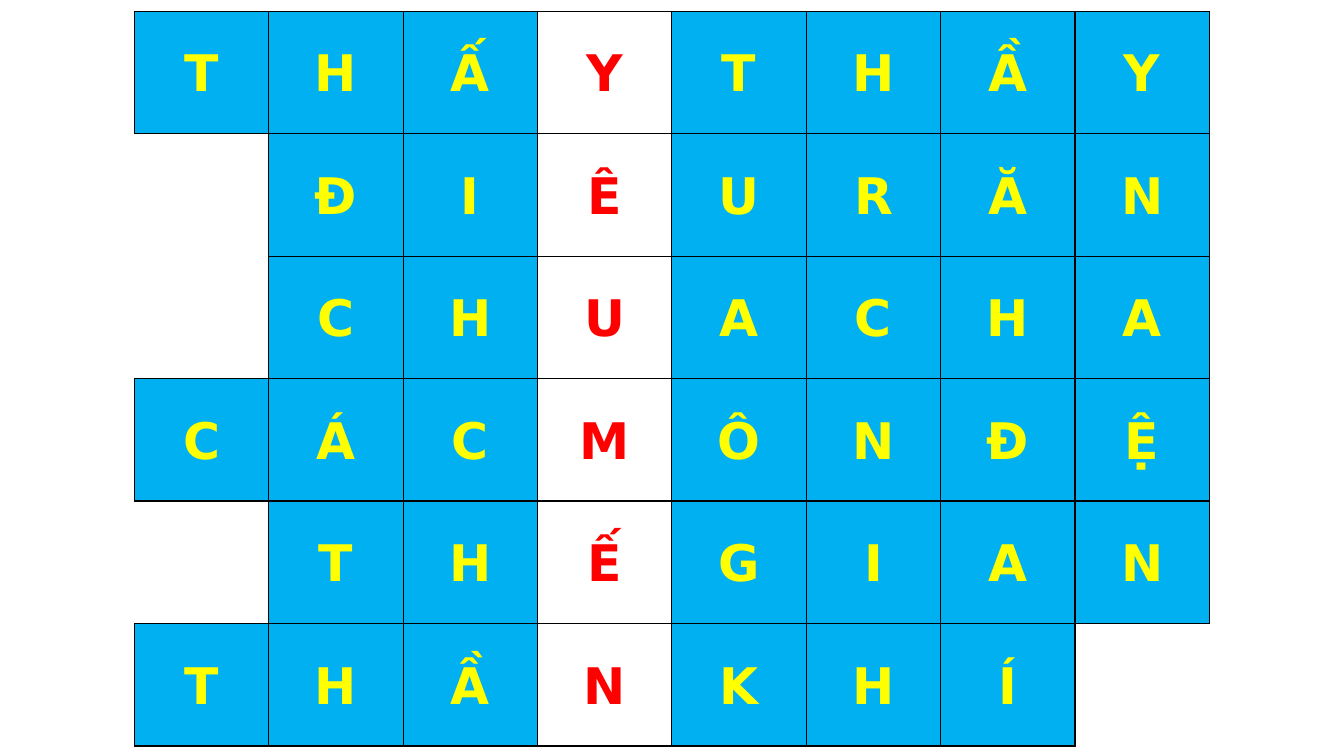
from dataclasses import dataclass

from lxml.etree import SubElement
from pptx import Presentation
from pptx.dml.color import RGBColor
from pptx.enum.text import MSO_ANCHOR, PP_ALIGN
from pptx.oxml.ns import qn
from pptx.util import Emu, Pt


@dataclass(frozen=True)
class Theme:
    """Colours and type of the crossword."""
    tile: str = "00B0F0"
    key_tile: str = "FFFFFF"
    letter: str = "FFFF00"
    key_letter: str = "FF0000"
    border: str = "000000"
    font: str = "DejaVu Sans"
    letter_size: int = 36
    line_spacing: float = 1.07
    border_width: int = 1


THEME = Theme()
EMU_PER_PX = 6350
SLIDE_WIDTH, SLIDE_HEIGHT = 1920, 1080
COLUMN_WIDTH, ROW_HEIGHT, GRID_TOP = 192, 175, 16
CELL_INSET = 10
COLUMN_COUNT = 10
KEY_COLUMN = 4
ANSWERS = [
    (1, "THẤYTHẦY"),
    (2, "ĐIÊURĂN"),
    (2, "CHUACHA"),
    (1, "CÁCMÔNĐỆ"),
    (2, "THẾGIAN"),
    (1, "THẦNKHÍ"),
]
EDGES = {"a:lnL": (0, -1), "a:lnR": (0, 1), "a:lnT": (-1, 0), "a:lnB": (1, 0)}


def px(length):
    """Turn pixels into EMU."""
    return Emu(length * EMU_PER_PX)


def place_letters():
    """Map each (row, column) to its letter."""
    return {
        (row, start + offset): letter
        for row, (start, answer) in enumerate(ANSWERS)
        for offset, letter in enumerate(answer)
    }


def add_edge(cell, tag, visible):
    """Draw or clear one border of a cell."""
    properties = cell._tc.get_or_add_tcPr()
    line = SubElement(properties, qn(tag), w=str(Pt(THEME.border_width)))
    if visible:
        fill = SubElement(line, qn("a:solidFill"))
        SubElement(fill, qn("a:srgbClr"), val=THEME.border)
    else:
        SubElement(line, qn("a:noFill"))


def fill_tile(cell, letter, is_key):
    """Colour a tile and centre its letter."""
    cell.fill.solid()
    tile = THEME.key_tile if is_key else THEME.tile
    cell.fill.fore_color.rgb = RGBColor.from_string(tile)
    cell.vertical_anchor = MSO_ANCHOR.MIDDLE
    cell.margin_left = cell.margin_right = px(CELL_INSET)
    cell.margin_top = cell.margin_bottom = 0
    para = cell.text_frame.paragraphs[0]
    para.text = letter
    para.alignment = PP_ALIGN.CENTER
    para.line_spacing = THEME.line_spacing
    para.font.name = THEME.font
    para.font.size = Pt(THEME.letter_size)
    para.font.bold = True
    colour = THEME.key_letter if is_key else THEME.letter
    para.font.color.rgb = RGBColor.from_string(colour)


def add_crossword(page):
    """Add the crossword table, bordering every lettered tile."""
    row_count = len(ANSWERS)
    table = page.shapes.add_table(
        row_count, COLUMN_COUNT, 0, px(GRID_TOP),
        px(COLUMN_WIDTH * COLUMN_COUNT), px(ROW_HEIGHT * row_count),
    ).table
    table.first_row = table.horz_banding = False
    letters = place_letters()
    for row in range(row_count):
        for column in range(COLUMN_COUNT):
            cell = table.cell(row, column)
            lettered = (row, column) in letters
            for tag, (down, right) in EDGES.items():
                neighbour = (row + down, column + right)
                add_edge(cell, tag, lettered or neighbour in letters)
            if lettered:
                fill_tile(cell, letters[row, column], column == KEY_COLUMN)
            else:
                cell.fill.background()


def main():
    """Build and save the deck."""
    deck = Presentation()
    deck.slide_width, deck.slide_height = px(SLIDE_WIDTH), px(SLIDE_HEIGHT)
    page = deck.slides.add_slide(deck.slide_layouts.get_by_name("Blank"))
    add_crossword(page)
    deck.save("out.pptx")


if __name__ == "__main__":
    main()
